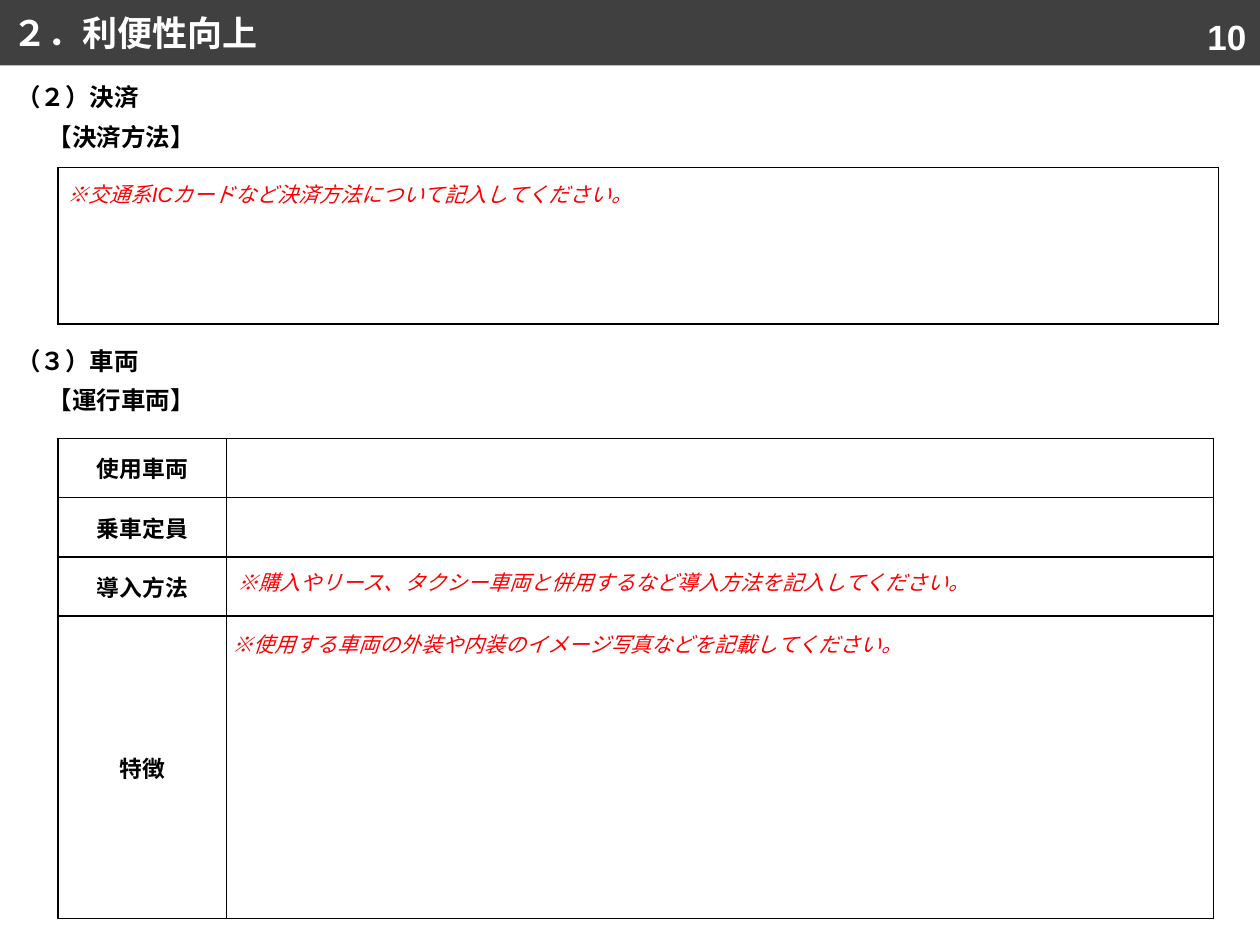
import pptx
import pptx.dml.color
import pptx.enum.shapes
import pptx.enum.text
import pptx.oxml
import pptx.oxml.ns
import pptx.util
from pptx.util import Inches

ALIGN = pptx.enum.text.PP_ALIGN
MIDDLE = pptx.enum.text.MSO_ANCHOR.MIDDLE
JAPANESE_FONT = "Noto Sans CJK JP"


def color(value):
    return pptx.dml.color.RGBColor.from_string(value)


def write_text(text_frame, text, style, alignment=ALIGN.LEFT):
    paragraph = text_frame.paragraphs[0]
    paragraph.alignment = alignment
    run = paragraph.add_run()
    run.text = text
    values = dict(style)
    run.font.color.rgb = color(values.pop("color"))
    values["size"] = pptx.util.Pt(values["size"])
    for name, value in values.items():
        setattr(run.font, name, value)
    east_asian = pptx.oxml.parse_xml(
        f'<a:ea {pptx.oxml.ns.nsdecls("a")} typeface="{JAPANESE_FONT}"/>'
    )
    run.font._element.append(east_asian)


title_style = {"size": 20, "name": JAPANESE_FONT, "color": "FFFFFF", "bold": True}
number_style = {**title_style, "name": "Arial"}
heading_style = {"size": 14, "name": "Arial", "color": "000000", "bold": True}
label_style = {"size": 13, "name": JAPANESE_FONT, "color": "000000", "bold": True}
hint_style = {"size": 12, "name": "Arial", "color": "FF0000", "italic": True}

presentation = pptx.Presentation()
presentation.slide_width = Inches(10)
presentation.slide_height = Inches(7.5)
slide = presentation.slides.add_slide(presentation.slide_layouts[6])

title_bar = slide.shapes.add_shape(
    pptx.enum.shapes.MSO_SHAPE.RECTANGLE, 0, 0, Inches(10), Inches(0.52)
)
title_bar.shadow.inherit = False
title_bar.fill.solid()
title_bar.fill.fore_color.rgb = color("404040")
title_bar.line.fill.background()
title_bar.text_frame.vertical_anchor = MIDDLE
write_text(title_bar.text_frame, "２．利便性向上", title_style)

tables = [
    (1.33, [9.21], [1.24], [""]),
    (3.48, [1.34, 7.83], [0.47, 0.47, 0.47, 2.4],
     ["使用車両", "乗車定員", "導入方法", "特徴"]),
]
for top, widths, heights, labels in tables:
    table = slide.shapes.add_table(
        len(heights), len(widths), Inches(0.46), Inches(top),
        Inches(sum(widths)), Inches(sum(heights)),
    ).table
    table.first_row = False
    table.horz_banding = False
    for column, width in zip(table.columns, widths):
        column.width = Inches(width)
    for row, height, label in zip(table.rows, heights, labels):
        row.height = Inches(height)
        if label:
            label_cell = row.cells[0]
            cell_format = {
                "vertical_anchor": MIDDLE,
                "margin_left": Inches(0.06),
                "margin_right": Inches(0.06),
                "margin_top": 0,
                "margin_bottom": 0,
            }
            for name, value in cell_format.items():
                setattr(label_cell, name, value)
            write_text(label_cell.text_frame, label, label_style, ALIGN.CENTER)
    for cell in table.iter_cells():
        cell.fill.solid()
        cell.fill.fore_color.rgb = color("FFFFFF")
        properties = cell._tc.get_or_add_tcPr()
        for index, side in enumerate(["lnL", "lnR", "lnT", "lnB"]):
            border = pptx.oxml.parse_xml(
                f'<a:{side} {pptx.oxml.ns.nsdecls("a")} w="12700"><a:solidFill>'
                f'<a:srgbClr val="000000"/></a:solidFill></a:{side}>'
            )
            properties.insert(index, border)

heading_size = (5.65, 0.34)
hint_size = (8.03, 0.3)
text_boxes = [
    (7.55, 0.07, (2.44, 0.38), "10", number_style, ALIGN.RIGHT),
    (0.03, 0.6, heading_size, "（２）決済", heading_style, ALIGN.LEFT),
    (0.28, 0.92, heading_size, "【決済方法】", heading_style, ALIGN.LEFT),
    (0.44, 1.39, hint_size, "※交通系ICカードなど決済方法について記入してください。",
     hint_style, ALIGN.LEFT),
    (0.03, 2.7, heading_size, "（３）車両", heading_style, ALIGN.LEFT),
    (0.28, 3.01, heading_size, "【運行車両】", heading_style, ALIGN.LEFT),
    (1.79, 4.47, hint_size,
     "※購入やリース、タクシー車両と併用するなど導入方法を記入してください。",
     hint_style, ALIGN.LEFT),
    (1.75, 4.96, hint_size,
     "※使用する車両の外装や内装のイメージ写真などを記載してください。",
     hint_style, ALIGN.LEFT),
]
for left, top, (width, height), text, style, alignment in text_boxes:
    text_box = slide.shapes.add_textbox(
        Inches(left), Inches(top), Inches(width), Inches(height)
    )
    text_box.text_frame.word_wrap = True
    write_text(text_box.text_frame, text, style, alignment)

presentation.save("out.pptx")
